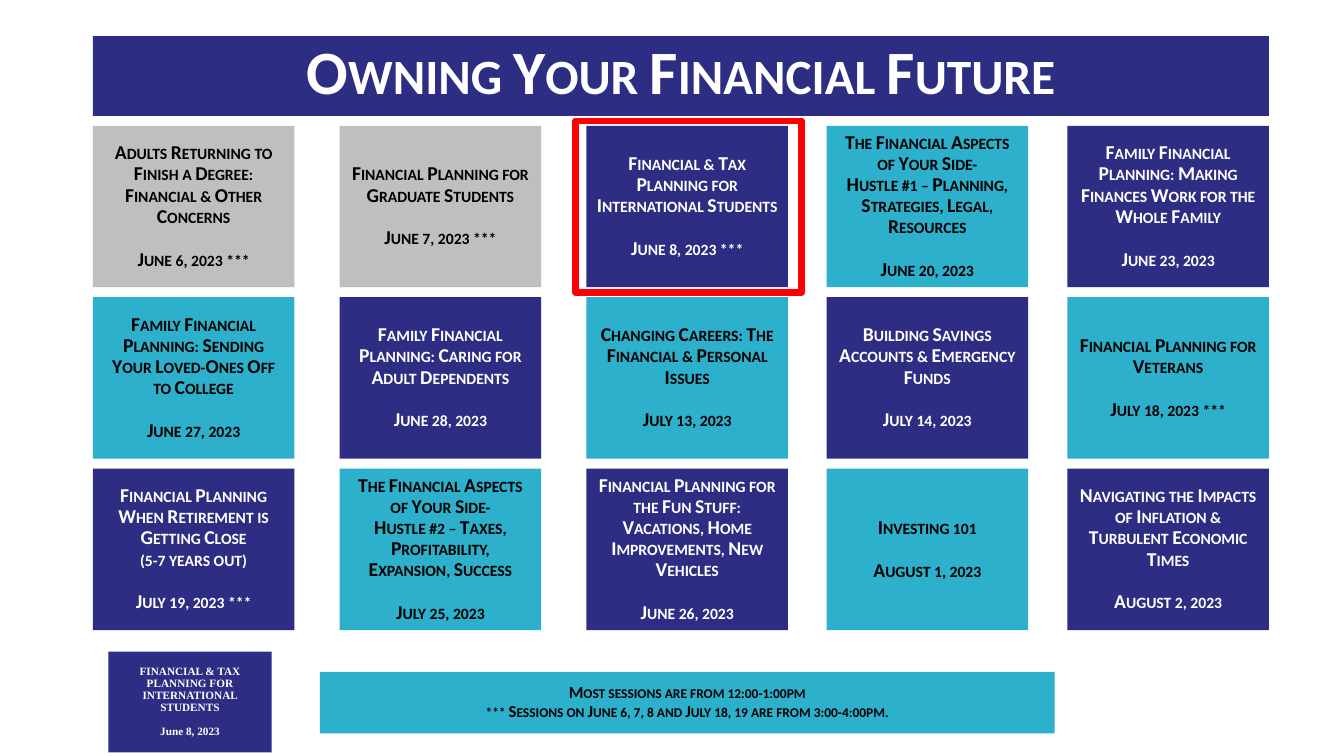
"""Build the schedule slide of a financial planning series."""
from dataclasses import dataclass

from pptx import Presentation
from pptx.dml.color import RGBColor
from pptx.enum.shapes import MSO_SHAPE as Shape
from pptx.enum.text import MSO_ANCHOR as Anchor, MSO_AUTO_SIZE as AutoSize, PP_ALIGN as Align
from pptx.util import Cm, Pt


@dataclass(frozen=True)
class Theme:
    """Colours, fonts and type sizes of the slide."""
    navy: str = "2D2D83"
    teal: str = "2DB0CC"
    grey: str = "BFBFBF"
    red: str = "FF0000"
    white: str = "FFFFFF"
    black: str = "000000"
    font: str = "Calibri"
    reminder_font: str = "Times New Roman"
    title_size: float = 44
    card_size: float = 14
    note_size: float = 12
    reminder_size: float = 8
    line_spacing: float = 0.9
    frame_width: float = 5

    def text_on(self, fill):
        """Return the text colour that reads on a fill."""
        return self.white if fill == self.navy else self.black


THEME = Theme()
COLUMNS = (2.34, 8.56, 14.78, 20.83, 26.9)
FIRST_ROW, ROW_STEP = 3.17, 4.32
CARD_WIDTH, CARD_HEIGHT = 5.08, 4.07
SESSIONS = (
    (
        (THEME.grey, "Adults Returning to Finish a Degree: Financial & Other Concerns", "June 6, 2023 ***"),
        (THEME.grey, "Financial Planning for Graduate Students", "June 7, 2023 ***"),
        (THEME.navy, "Financial & Tax Planning for International Students", "June 8, 2023 ***"),
        (THEME.teal, "The Financial Aspects of Your Side-\nHustle #1 – Planning, Strategies, Legal, Resources",
         "June 20, 2023"),
        (THEME.navy, "Family Financial Planning: Making Finances Work for the Whole Family", "June 23, 2023"),
    ),
    (
        (THEME.teal, "Family Financial Planning: Sending Your Loved-Ones Off to College", "June 27, 2023"),
        (THEME.navy, "Family Financial Planning: Caring for Adult Dependents", "June 28, 2023"),
        (THEME.teal, "Changing Careers: The Financial & Personal Issues", "July 13, 2023"),
        (THEME.navy, "Building Savings Accounts & Emergency Funds", "July 14, 2023"),
        (THEME.teal, "Financial Planning for Veterans", "July 18, 2023 ***"),
    ),
    (
        (THEME.navy, "Financial Planning When Retirement is Getting Close\n(5-7 years out)", "July 19, 2023 ***"),
        (THEME.teal, "The Financial Aspects of Your Side-\nHustle #2 – Taxes, Profitability, Expansion, Success",
         "July 25, 2023"),
        (THEME.navy, "Financial Planning for the Fun Stuff: Vacations, Home Improvements, New Vehicles",
         "June 26, 2023"),
        (THEME.teal, "Investing 101", "August 1, 2023"),
        (THEME.navy, "Navigating the Impacts of Inflation & Turbulent Economic Times", "August 2, 2023"),
    ),
)


def add_run(paragraph, text, size, colour, font, small_caps):
    """Add one bold run to a paragraph."""
    run = paragraph.add_run()
    run.text = text
    run.font.name = font
    run.font.size = Pt(size)
    run.font.bold = True
    run.font.color.rgb = RGBColor.from_string(colour)
    if small_caps:
        run.font._element.set("cap", "small")


def write_text(shape, texts, size, colour, font=THEME.font, small_caps=True, anchor=Anchor.MIDDLE):
    """Write centred paragraphs, each one line apart from the one before."""
    frame = shape.text_frame
    frame.word_wrap = True
    frame.auto_size = AutoSize.NONE
    frame.vertical_anchor = anchor
    for index, text in enumerate(texts):
        paragraph = frame.add_paragraph() if index else frame.paragraphs[0]
        paragraph.alignment = Align.CENTER
        paragraph.line_spacing = THEME.line_spacing
        paragraph.space_before = Pt(round(size * 1.1, 1) if index else 0)
        for number, line in enumerate(text.split("\n")):
            if number:
                paragraph.add_line_break()
            add_run(paragraph, line, size, colour, font, small_caps)


def place(shape, left, top, width, height):
    """Set the position and size of a shape in centimetres."""
    shape.left, shape.top, shape.width, shape.height = Cm(left), Cm(top), Cm(width), Cm(height)


def paint(shape, fill):
    """Give a shape a solid fill."""
    shape.fill.solid()
    shape.fill.fore_color.rgb = RGBColor.from_string(fill)


def add_title(slide, text):
    """Turn the title placeholder into a full-width banner."""
    title = slide.shapes.title
    place(title, 2.34, 0.91, 29.64, 2.01)
    paint(title, THEME.navy)
    write_text(title, [text], THEME.title_size, THEME.white, anchor=Anchor.TOP)


def add_box(slide, bounds, fill, texts, size, **text_style):
    """Add a filled rectangle with text."""
    box = slide.shapes.add_shape(Shape.RECTANGLE, *map(Cm, bounds))
    box.shadow.inherit = False
    paint(box, fill)
    box.line.fill.background()
    write_text(box, texts, size, THEME.text_on(fill), **text_style)


def add_frame(slide, bounds):
    """Add an unfilled red frame."""
    frame = slide.shapes.add_shape(Shape.RECTANGLE, *map(Cm, bounds))
    frame.shadow.inherit = False
    frame.fill.background()
    frame.line.color.rgb = RGBColor.from_string(THEME.red)
    frame.line.width = Pt(THEME.frame_width)


def add_sessions(slide):
    """Lay out the session cards in a grid."""
    for row, sessions in enumerate(SESSIONS):
        for left, (fill, topic, date) in zip(COLUMNS, sessions):
            bounds = (left, FIRST_ROW + row * ROW_STEP, CARD_WIDTH, CARD_HEIGHT)
            add_box(slide, bounds, fill, [topic, date], THEME.card_size)


def main():
    """Build and save the slide."""
    presentation = Presentation()
    presentation.slide_width, presentation.slide_height = Cm(33.87), Cm(19.05)
    slide = presentation.slides.add_slide(presentation.slide_layouts.get_by_name("Title Only"))
    add_title(slide, "Owning Your Financial Future")
    add_box(slide, (2.73, 16.42, 4.12, 2.54), THEME.navy,
            ["FINANCIAL & TAX PLANNING FOR INTERNATIONAL STUDENTS", "June 8, 2023"],
            THEME.reminder_size, font=THEME.reminder_font, small_caps=False)
    add_sessions(slide)
    add_box(slide, (8.06, 16.93, 18.52, 1.55), THEME.teal,
            ["Most sessions are from 12:00-1:00pm\n"
             "*** Sessions on June 6, 7, 8 and July 18, 19 are from 3:00-4:00pm."],
            THEME.note_size)
    add_frame(slide, (14.51, 3.05, 5.69, 4.32))
    presentation.save("out.pptx")


if __name__ == "__main__":
    main()
